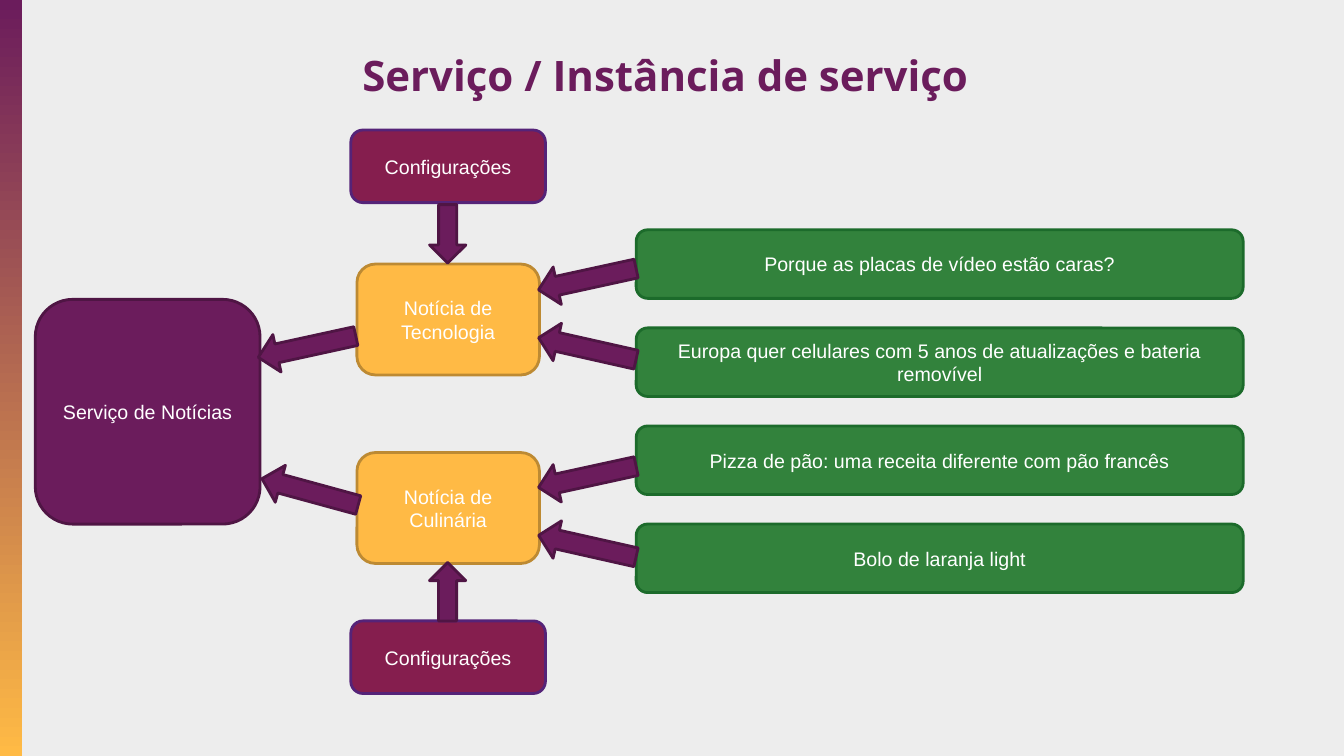
from pptx import Presentation
from pptx.dml.color import RGBColor
from pptx.enum.shapes import MSO_SHAPE
from pptx.enum.text import MSO_ANCHOR, MSO_AUTO_SIZE, PP_ALIGN
from pptx.util import Inches, Pt

PURPLE, DARK_PURPLE = "6B1C5C", "4F1544"
AMBER, DARK_AMBER = "FFBA45", "BD8A33"
GREEN, DARK_GREEN = "32823C", "1C6B2B"
WINE, VIOLET = "851E4E", "552378"


def write(shape, text, size=14, font="Arial", color="FFFFFF", bold=False, inset=0.1):
    frame = shape.text_frame
    frame.word_wrap = True
    frame.auto_size = MSO_AUTO_SIZE.NONE
    frame.vertical_anchor = MSO_ANCHOR.MIDDLE
    frame.margin_left = frame.margin_right = Inches(inset)
    frame.margin_top = frame.margin_bottom = Inches(inset)
    paragraph = frame.paragraphs[0]
    paragraph.alignment = PP_ALIGN.CENTER
    run = paragraph.add_run()
    run.text = text
    run.font.size = Pt(size)
    run.font.name = font
    run.font.bold = bold
    run.font.color.rgb = RGBColor.from_string(color)


def draw(kind, left, top, width, height, fill, line, rotation=0):
    shape = slide.shapes.add_shape(
        kind, Inches(left), Inches(top), Inches(width), Inches(height))
    shape.shadow.inherit = False
    shape.fill.solid()
    shape.fill.fore_color.rgb = RGBColor.from_string(fill)
    shape.line.color.rgb = RGBColor.from_string(line)
    shape.line.width = Pt(2)
    shape.rotation = rotation
    return shape


presentation = Presentation()
presentation.slide_width, presentation.slide_height = Inches(13.33), Inches(7.5)
slide = presentation.slides.add_slide(presentation.slide_layouts[5])
slide.background.fill.solid()
slide.background.fill.fore_color.rgb = RGBColor.from_string("EDEDED")

# Gradient strip on the left edge
strip = draw(MSO_SHAPE.RECTANGLE, 0, 0, 0.22, 7.5, PURPLE, PURPLE)
strip.line.fill.background()
strip.fill.gradient()
strip.fill.gradient_angle = 270
for stop, color in zip(strip.fill.gradient_stops, (PURPLE, AMBER)):
    stop.color.rgb = RGBColor.from_string(color)

# Title
title = slide.shapes.title
title.left, title.top = Inches(1.29), Inches(0.08)
title.width, title.height = Inches(10.62), Inches(1.32)
write(title, "Serviço / Instância de serviço", size=30, font="Open Sans",
      color=PURPLE, bold=True, inset=0.13)

# Service, its instances and their settings
boxes = [
    ("Serviço de Notícias", 0.35, 2.97, 2.23, 2.23, PURPLE, DARK_PURPLE),
    ("Notícia de Tecnologia", 3.54, 2.62, 1.81, 1.1, AMBER, DARK_AMBER),
    ("Notícia de Culinária", 3.54, 4.49, 1.81, 1.1, AMBER, DARK_AMBER),
    ("Configurações", 3.48, 1.29, 1.93, 0.72, WINE, VIOLET),
    ("Configurações", 3.48, 6.16, 1.93, 0.72, WINE, VIOLET),
]

# News items, evenly spaced
news = [
    "Porque as placas de vídeo estão caras?",
    "Europa quer celulares com 5 anos de atualizações e bateria removível",
    "Pizza de pão: uma receita diferente com pão francês",
    "Bolo de laranja light",
]
for row, headline in enumerate(news):
    boxes.append((headline, 6.31, 2.28 + row * 0.973, 6.02, 0.68, GREEN, DARK_GREEN))

for text, *look in boxes:
    write(draw(MSO_SHAPE.ROUNDED_RECTANGLE, *look), text)

# Arrows from news to instances and from instances to the service
UPWARD, DOWNWARD = 12.7, 347.7
for left, top, rotation in [
    (2.55, 3.25, DOWNWARD), (2.58, 4.69, 15.3),
    (5.33, 2.58, DOWNWARD), (5.33, 3.27, UPWARD),
    (5.33, 4.54, DOWNWARD), (5.33, 5.23, UPWARD),
]:
    draw(MSO_SHAPE.LEFT_ARROW, left, top, 0.99, 0.38, PURPLE, DARK_PURPLE, rotation)

# Arrows from settings to instances
for top, rotation in [(2.14, 90), (5.69, 270)]:
    draw(MSO_SHAPE.RIGHT_ARROW, 4.15, top, 0.58, 0.36, PURPLE, DARK_PURPLE, rotation)

presentation.save("out.pptx")
